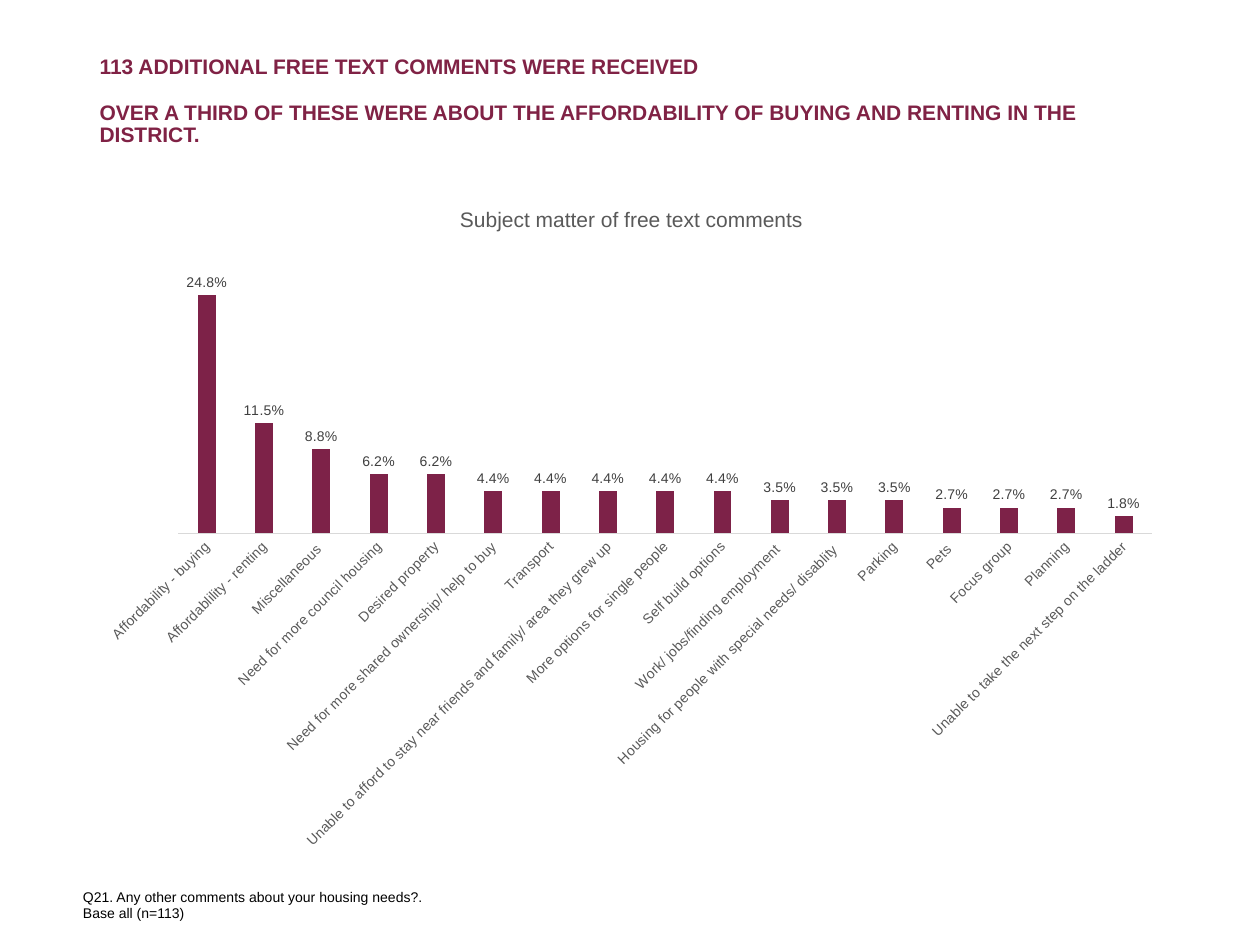
from pptx import Presentation
from pptx import util as u
from pptx.chart.data import CategoryChartData
from pptx.dml.color import RGBColor
from pptx.enum import chart as ch, text
from pptx.oxml import parse_xml
from pptx.oxml.ns import nsdecls

HUES = {"head": "802245", "bar": "7D2248", "text": "595959",
        "value": "404040", "line": "D9D9D9", "note": "000000"}

DATA = [
    ("Affordability - buying", 0.248),
    ("Affordablility - renting", 0.115),
    ("Miscellaneous ", 0.088),
    ("Need for more council housing", 0.062),
    ("Desired property", 0.062),
    ("Need for more shared ownership/ help to buy", 0.044),
    ("Transport", 0.044),
    ("Unable to afford to stay near friends and family/ area they grew up", 0.044),
    ("More options for single people", 0.044),
    ("Self build options", 0.044),
    ("Work/ jobs/finding employment ", 0.035),
    ("Housing for people with special needs/ disablity ", 0.035),
    ("Parking", 0.035),
    ("Pets ", 0.027),
    ("Focus group", 0.027),
    ("Planning", 0.027),
    ("Unable to take the next step on the ladder", 0.018),
]


class Deck:
    """Hold the style and the current slide."""

    def __init__(self):
        self.prs = Presentation()
        self.prs.slide_width, self.prs.slide_height = u.Inches(10), u.Inches(7.5)
        self.slide = self.prs.slides.add_slide(self.prs.slide_layouts[5])

    def style(self, font, size, hue, bold=False):
        font.name, font.size, font.bold = "Arial", u.Pt(size), bold
        font.color.rgb = RGBColor.from_string(HUES[hue])

    def fill(self, frame, lines, size, hue, bold=False, gap=0, lead=1.0):
        frame.text = "\n".join(lines)
        for i, para in enumerate(frame.paragraphs):
            para.alignment = text.PP_ALIGN.LEFT
            para.line_spacing = lead
            para.space_before = u.Pt(gap if i else 0)
            self.style(para.font, size, hue, bold)

    def title(self, box, lines):
        shape = self.slide.shapes.title
        shape.left, shape.top, shape.width, shape.height = map(u.Inches, box)
        frame = shape.text_frame
        frame.auto_size = text.MSO_AUTO_SIZE.NONE
        frame.vertical_anchor = text.MSO_ANCHOR.TOP
        self.fill(frame, lines, 12, "head", True, 13, 0.9)

    def note(self, box, lines):
        frame = self.slide.shapes.add_textbox(*map(u.Inches, box)).text_frame
        frame.word_wrap = False
        frame.auto_size = text.MSO_AUTO_SIZE.SHAPE_TO_FIT_TEXT
        self.fill(frame, lines, 8, "note")

    def layout(self, node, inner=False, **spots):
        for old in node.findall("{*}layout"):
            node.remove(old)
        target = '<c:layoutTarget val="inner"/>' if inner else ""
        modes = "".join(f'<c:{k}Mode val="edge"/>' for k in "xy")
        parts = "".join(f'<c:{k} val="{v}"/>' for k, v in spots.items())
        xml = parse_xml(f'<c:layout {nsdecls("c")}><c:manualLayout>{target}'
                        f"{modes}{parts}</c:manualLayout></c:layout>")
        node.insert(0 if inner else 1, xml)

    def chart(self, box, title, rows):
        data = CategoryChartData(number_format="0.0%")
        data.categories = [name for name, _ in rows]
        data.add_series("Series 1", [value for _, value in rows])
        chart = self.slide.shapes.add_chart(
            ch.XL_CHART_TYPE.COLUMN_CLUSTERED, *map(u.Inches, box), data).chart
        chart.has_legend = False
        chart.font.name, chart.font.size = "Calibri", u.Pt(10)
        chart.has_title = True
        head = chart.chart_title
        head.text_frame.text = title
        self.style(head.text_frame.paragraphs[0].font, 12, "text")
        head.include_in_layout = False
        self.layout(head._element, x=0.34, y=0.04)
        self.layout(chart.plots[0]._element.getparent(), True,
                    x=0.084, y=0.102, w=0.897, h=0.419)
        self.axes(chart)
        self.bars(chart.plots[0])

    def axes(self, chart):
        cat, val = chart.category_axis, chart.value_axis
        cat.major_tick_mark = ch.XL_TICK_MARK.NONE
        cat.format.line.color.rgb = RGBColor.from_string(HUES["line"])
        cat.format.line.width = u.Pt(0.75)
        self.style(cat.tick_labels.font, 8, "text")
        cat._element.txPr.bodyPr.set("rot", str(-45 * 60000))
        val.minimum_scale, val.maximum_scale = 0, 0.3
        val.has_major_gridlines = val.visible = False

    def bars(self, plot):
        plot.gap_width, plot.overlap = 219, -27
        plot.vary_by_categories = False
        fill = plot.series[0].format.fill
        fill.solid()
        fill.fore_color.rgb = RGBColor.from_string(HUES["bar"])
        labels = plot.series[0].data_labels
        labels.show_value = True
        labels.number_format, labels.number_format_is_linked = "0.0%", False
        labels.position = ch.XL_LABEL_POSITION.OUTSIDE_END
        self.style(labels.font, 8, "value")


def main():
    deck = Deck()
    deck.title((0.69, 0.4, 8.62, 0.64), [
        "113 ADDITIONAL FREE TEXT COMMENTS WERE RECEIVED",
        "OVER A THIRD OF THESE WERE ABOUT THE AFFORDABILITY OF BUYING "
        "AND RENTING IN THE DISTRICT."])
    deck.chart((0.69, 1.39, 8.62, 5.46), "Subject matter of free text comments", DATA)
    deck.note((0.56, 7, 2.94, 0.37), [
        "Q21. Any other comments about your housing needs?.",
        "Base all (n=113)"])
    deck.prs.save("out.pptx")


if __name__ == "__main__":
    main()
